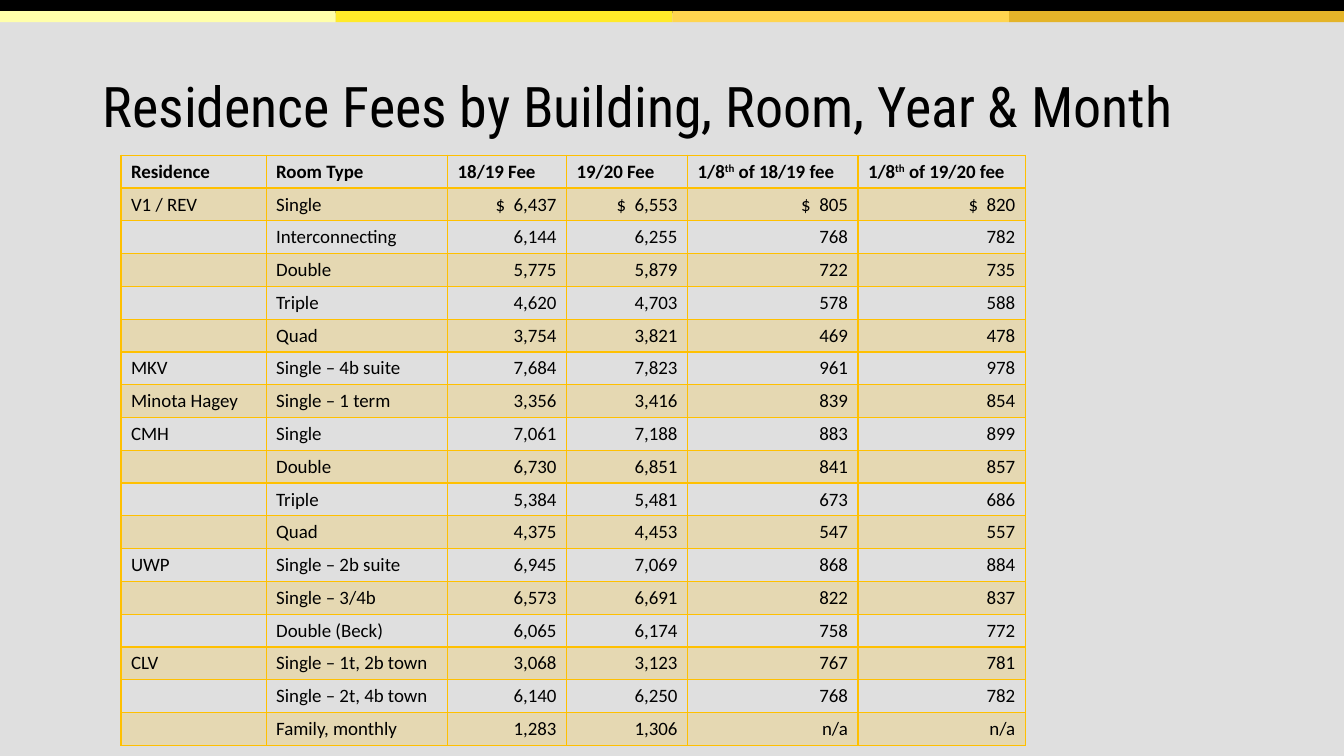
from dataclasses import dataclass

from lxml import etree
from pptx import Presentation
from pptx.dml.color import RGBColor
from pptx.enum.shapes import MSO_SHAPE
from pptx.enum.text import MSO_ANCHOR, PP_ALIGN
from pptx.oxml.ns import qn
from pptx.util import Inches, Pt

RECTANGLE = MSO_SHAPE.RECTANGLE
MIDDLE = MSO_ANCHOR.MIDDLE
RIGHT = PP_ALIGN.RIGHT


@dataclass(frozen=True)
class Theme:
    """Colours, fonts and type sizes of the slide."""

    background: str = "DFDFDF"
    ink: str = "000000"
    gold: str = "FFC000"
    stripes: tuple = ("FFFFAA", "FFEA29", "FFD54F", "E4B429")
    title_font: str = "Roboto Condensed"
    table_font: str = "Calibri"
    title_size: float = 40
    table_size: float = 13.5
    band_opacity: int = 20


THEME = Theme()
COLUMN_WIDTHS = (1.44, 1.8, 1.18, 1.2, 1.69, 1.66)
ROW_HEIGHT = 0.3
FIRST_FEE_COLUMN = 2
ORDINAL = "th"
FEES = (
    ("Residence", "Room Type", "18/19 Fee", "19/20 Fee",
     "1/8th of 18/19 fee", "1/8th of 19/20 fee"),
    ("V1 / REV", "Single", "$  6,437", "$  6,553", "$  805", "$  820"),
    ("", "Interconnecting", "6,144", "6,255", "768", "782"),
    ("", "Double", "5,775", "5,879", "722", "735"),
    ("", "Triple", "4,620", "4,703", "578", "588"),
    ("", "Quad", "3,754", "3,821", "469", "478"),
    ("MKV", "Single – 4b suite", "7,684", "7,823", "961", "978"),
    ("Minota Hagey", "Single – 1 term", "3,356", "3,416", "839", "854"),
    ("CMH", "Single", "7,061", "7,188", "883", "899"),
    ("", "Double", "6,730", "6,851", "841", "857"),
    ("", "Triple", "5,384", "5,481", "673", "686"),
    ("", "Quad", "4,375", "4,453", "547", "557"),
    ("UWP", "Single – 2b suite", "6,945", "7,069", "868", "884"),
    ("", "Single – 3/4b", "6,573", "6,691", "822", "837"),
    ("", "Double (Beck)", "6,065", "6,174", "758", "772"),
    ("CLV", "Single – 1t, 2b town", "3,068", "3,123", "767", "781"),
    ("", "Single – 2t, 4b town", "6,140", "6,250", "768", "782"),
    ("", "Family, monthly", "1,283", "1,306", "n/a", "n/a"),
)


def add_bar(slide, left, top, width, height, color):
    """Draw a plain rectangle without outline."""
    bar = slide.shapes.add_shape(
        RECTANGLE, Inches(left), Inches(top), Inches(width), Inches(height))
    bar.shadow.inherit = False
    bar.fill.solid()
    bar.fill.fore_color.rgb = RGBColor.from_string(color)
    bar.line.fill.background()


def style_run(run, font, size, bold=False):
    """Apply a typeface, size and weight in the ink colour."""
    run.font.name = font
    run.font.size = Pt(size)
    run.font.bold = bold
    run.font.color.rgb = RGBColor.from_string(THEME.ink)


def add_title(slide, wording):
    """Add the slide heading."""
    heading = slide.shapes.add_textbox(
        Inches(0.92), Inches(0.79), Inches(11.5), Inches(0.6))
    frame = heading.text_frame
    frame.word_wrap = True
    frame.vertical_anchor = MIDDLE
    frame.text = wording
    paragraph = frame.paragraphs[0]
    paragraph.line_spacing = 0.9
    style_run(paragraph.runs[0], THEME.title_font, THEME.title_size)


def set_borders(cell, row):
    """Rule all four sides, heavier between the header and the fees."""
    widths = {"L": 1, "R": 1, "T": 2 if row == 1 else 1, "B": 2 if row == 0 else 1}
    properties = cell._tc.get_or_add_tcPr()
    for side, width in widths.items():
        rule = etree.SubElement(properties, qn(f"a:ln{side}"), w=str(Pt(width)))
        paint = etree.SubElement(rule, qn("a:solidFill"))
        etree.SubElement(paint, qn("a:srgbClr"), val=THEME.gold)


def set_band(cell, row):
    """Tint every odd row and leave the others clear."""
    if row % 2 == 0:
        cell.fill.background()
        return
    cell.fill.solid()
    cell.fill.fore_color.rgb = RGBColor.from_string(THEME.gold)
    tint = cell._tc.tcPr.find(f"{qn('a:solidFill')}/{qn('a:srgbClr')}")
    etree.SubElement(tint, qn("a:alpha"), val=str(THEME.band_opacity * 1000))


def fill_cell(cell, wording, row, column):
    """Write one cell, raising the ordinal ending in the header."""
    paragraph = cell.text_frame.paragraphs[0]
    if row > 0 and column >= FIRST_FEE_COLUMN:
        paragraph.alignment = RIGHT
    if not wording:
        etree.SubElement(paragraph._p, qn("a:endParaRPr"),
                         sz=str(int(THEME.table_size * 100)))
        return
    has_ordinal = row == 0 and ORDINAL in wording
    for part in wording.partition(ORDINAL) if has_ordinal else (wording,):
        run = paragraph.add_run()
        run.text = part
        style_run(run, THEME.table_font, THEME.table_size, bold=row == 0)
        if part == ORDINAL:
            run.font._element.set("baseline", "30000")


def add_fee_table(slide):
    """Build the table of residence fees."""
    fee_table = slide.shapes.add_table(
        len(FEES), len(COLUMN_WIDTHS), Inches(1.2), Inches(1.54),
        Inches(sum(COLUMN_WIDTHS)), Inches(ROW_HEIGHT * len(FEES))).table
    for column, width in zip(fee_table.columns, COLUMN_WIDTHS):
        column.width = Inches(width)
    for row, fees in enumerate(FEES):
        fee_table.rows[row].height = Inches(ROW_HEIGHT)
        for column, wording in enumerate(fees):
            cell = fee_table.cell(row, column)
            set_borders(cell, row)
            set_band(cell, row)
            fill_cell(cell, wording, row, column)


def main():
    """Create the residence fees slide."""
    deck = Presentation()
    deck.slide_width = Inches(13.33)
    deck.slide_height = Inches(7.5)
    slide = deck.slides.add_slide(deck.slide_layouts[6])
    add_bar(slide, 0, 0, 13.33, 7.5, THEME.background)
    add_bar(slide, -0.01, 0, 13.35, 0.13, THEME.ink)
    for position, color in enumerate(THEME.stripes):
        add_bar(slide, -0.01 + 3.34 * position, 0.11, 3.34, 0.11, color)
    add_title(slide, "Residence Fees by Building, Room, Year & Month")
    add_fee_table(slide)
    deck.save("out.pptx")


if __name__ == "__main__":
    main()
